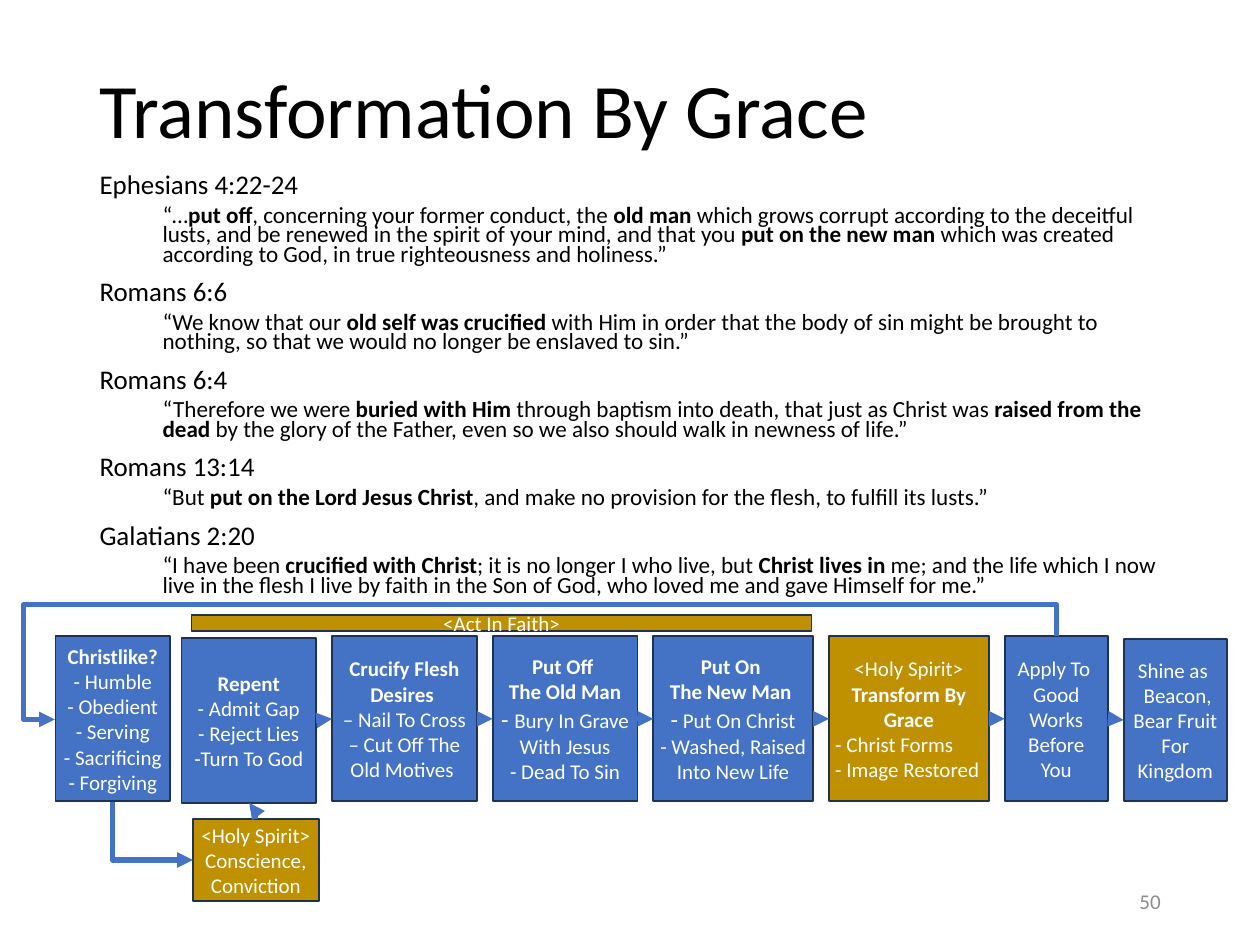
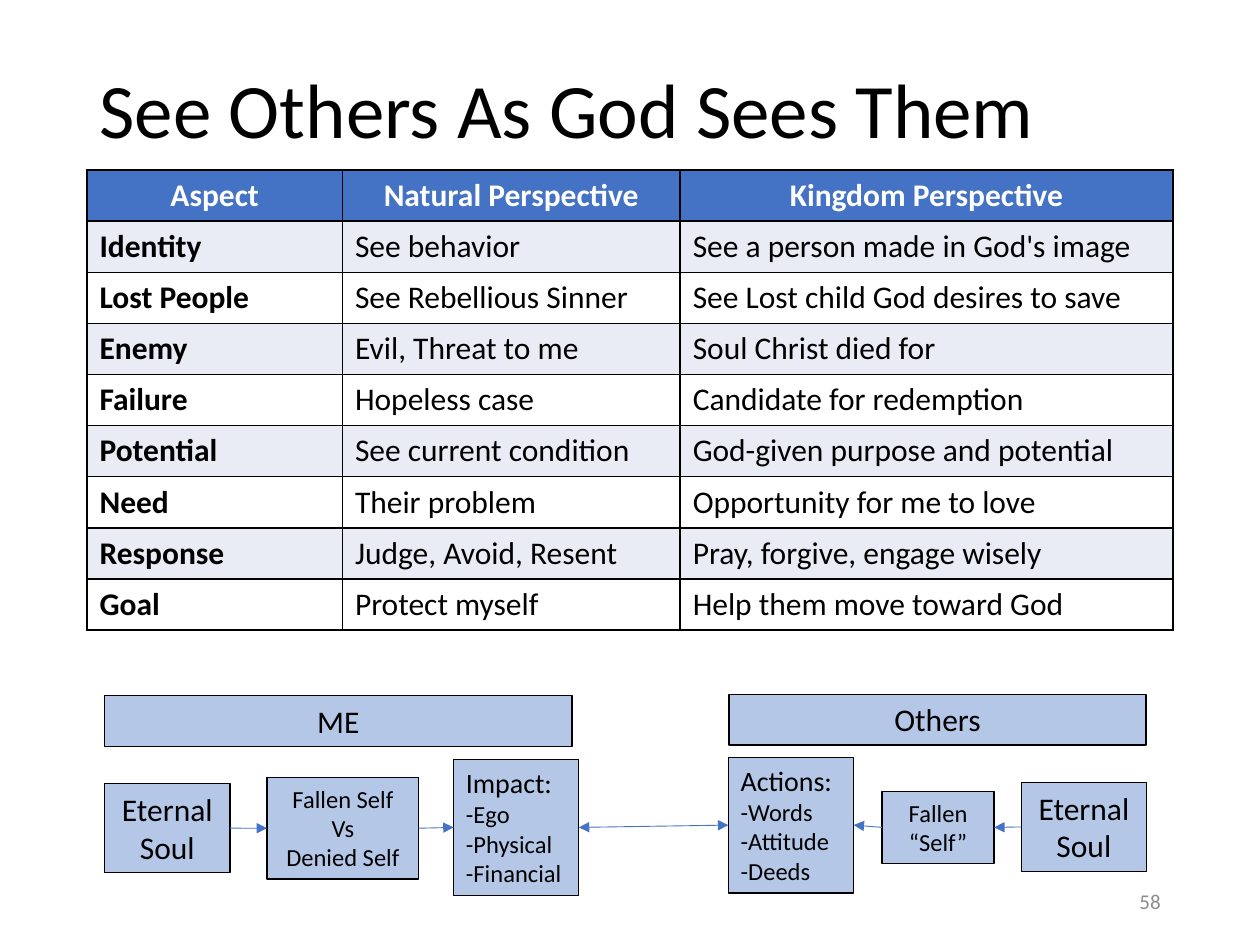
from dataclasses import dataclass
from itertools import pairwise

from lxml.etree import SubElement
from pptx import Presentation
from pptx.dml.color import RGBColor
from pptx.enum.shapes import MSO_CONNECTOR, MSO_SHAPE
from pptx.enum.text import MSO_ANCHOR, MSO_AUTO_SIZE, PP_ALIGN
from pptx.oxml.ns import qn
from pptx.util import Pt


@dataclass(frozen=True)
class Theme:
    font: str = "Calibri"
    black: str = "000000"
    white: str = "FFFFFF"
    blue: str = "4472C4"
    navy: str = "1E3256"
    gold: str = "BF9000"
    pale_blue: str = "B4C7E7"
    band: str = "E9EBF5"
    grey: str = "8C8C8C"
    title: float = 44
    reference: float = 15.4
    verse: float = 13.2
    large: float = 18
    heading: float = 16
    item: float = 14
    step: float = 12


THEME = Theme()
TITLE_ONLY, TITLE_AND_BODY = 5, 1
TOP, LEFT, BOTTOM, RIGHT = range(4)
MARGIN, CONTENT_TOP, CONTENT_WIDTH = 49.7, 97.2, 620.6


class Deck:
    """Holds the theme and the current slide, and draws each kind of element."""

    def __init__(self, theme):
        self.theme = theme
        self.presentation = Presentation()
        self.presentation.slide_width, self.presentation.slide_height = Pt(720), Pt(540)
        self.slide = None

    def new_slide(self, layout, title, number):
        self.slide = self.presentation.slides.add_slide(self.presentation.slide_layouts[layout])
        frame = self.place(self.slide.shapes.title, 28.8, 72, MSO_ANCHOR.MIDDLE)
        paragraph = frame.paragraphs[0]
        paragraph.alignment, paragraph.line_spacing = PP_ALIGN.LEFT, 0.9
        self.runs(paragraph, title, self.theme.title)
        # Slide number
        frame = self.slide.shapes.add_textbox(Pt(508.3), Pt(500.4), Pt(162), Pt(28.8)).text_frame
        frame.word_wrap, frame.vertical_anchor = True, MSO_ANCHOR.MIDDLE
        frame.paragraphs[0].alignment = PP_ALIGN.RIGHT
        self.runs(frame.paragraphs[0], number, self.theme.step, self.theme.grey)

    def place(self, placeholder, top, height, anchor):
        placeholder.left, placeholder.top = Pt(MARGIN), Pt(top)
        placeholder.width, placeholder.height = Pt(CONTENT_WIDTH), Pt(height)
        frame = placeholder.text_frame
        frame.word_wrap, frame.auto_size = True, MSO_AUTO_SIZE.NONE
        frame.vertical_anchor = anchor
        return frame

    def runs(self, paragraph, text, size, color=None):
        """Add text run by run; ** switches bold on and off."""
        for index, part in enumerate(text.split("**")):
            if part:
                run = paragraph.add_run()
                run.text = part
                run.font.name, run.font.size = self.theme.font, Pt(size)
                run.font.bold = index % 2 == 1
                run.font.color.rgb = RGBColor.from_string(color or self.theme.black)

    def paragraphs(self, frame, count):
        return [frame.paragraphs[0]] + [frame.add_paragraph() for _ in range(count - 1)]

    def verses(self, passages):
        frame = self.place(self.slide.placeholders[1], CONTENT_TOP, 283.7, MSO_ANCHOR.TOP)
        lines = [(level, text) for passage in passages for level, text in enumerate(passage)]
        for index, (paragraph, (level, text)) in enumerate(
                zip(self.paragraphs(frame, len(lines)), lines)):
            paragraph.level = level
            properties = paragraph._p.get_or_add_pPr()
            properties.set("marL", str(Pt(36 * level)))
            properties.set("indent", "0")
            SubElement(properties, qn("a:buNone"))
            paragraph.line_spacing = 0.7
            paragraph.space_before = Pt((5 if level else 10) if index else 0)
            self.runs(paragraph, text, self.theme.verse if level else self.theme.reference)

    def box(self, at, fill, line, line_width, lines, color, size, left_from=99):
        """Draw a box; a line is text, or a list of (text, size) runs."""
        shape = self.slide.shapes.add_shape(MSO_SHAPE.RECTANGLE, *map(Pt, at))
        shape.shadow.inherit = False
        shape.fill.solid()
        shape.fill.fore_color.rgb = RGBColor.from_string(fill)
        shape.line.color.rgb = RGBColor.from_string(line)
        shape.line.width = Pt(line_width)
        frame = shape.text_frame
        frame.word_wrap = True
        for index, (paragraph, content) in enumerate(
                zip(self.paragraphs(frame, len(lines)), lines)):
            paragraph.alignment = PP_ALIGN.CENTER if index < left_from else PP_ALIGN.LEFT
            for text, run_size in [(content, size)] if isinstance(content, str) else content:
                self.runs(paragraph, text, run_size, color)
        return shape

    def step(self, at, lines, fill=None, left_from=99):
        shape = self.box(at, fill or self.theme.blue, self.theme.navy, 1, lines,
                         self.theme.white, self.theme.step, left_from)
        frame = shape.text_frame
        frame.vertical_anchor = MSO_ANCHOR.MIDDLE
        frame.margin_left = frame.margin_right = Pt(3.6)
        frame.margin_top = frame.margin_bottom = Pt(3.6)
        return shape

    def label(self, at, lines, size, left_from=99):
        shape = self.box(at, self.theme.pale_blue, self.theme.black, 0.75, lines,
                         self.theme.black, size, left_from)
        shape.text_frame.vertical_anchor = MSO_ANCHOR.TOP
        shape.text_frame.auto_size = MSO_AUTO_SIZE.SHAPE_TO_FIT_TEXT
        return shape

    def finish_connector(self, connector, width, ends):
        connector.line.color.rgb = RGBColor.from_string(self.theme.blue)
        connector.line.width = Pt(width)
        for end in ends:
            SubElement(connector.line._get_or_add_ln(), qn(f"a:{end}End"), type="triangle")
        SubElement(connector._element.spPr, qn("a:effectLst"))

    def arrow(self, start, start_side, finish, finish_side, width, ends=("tail",)):
        connector = self.slide.shapes.add_connector(MSO_CONNECTOR.STRAIGHT, 0, 0, 0, 0)
        connector.begin_connect(start, start_side)
        connector.end_connect(finish, finish_side)
        self.finish_connector(connector, width, ends)

    def elbow(self, at, bends, rotation, end, flips=(), adjustments=()):
        left, top, width, height = at
        connector = self.slide.shapes.add_connector(
            MSO_CONNECTOR.ELBOW, Pt(left), Pt(top), Pt(left + width), Pt(top + height))
        properties = connector._element.spPr
        transform = properties.find(qn("a:xfrm"))
        transform.set("rot", str(rotation * 60000))
        for flip in flips:
            transform.set(flip, "1")
        geometry = properties.find(qn("a:prstGeom"))
        geometry.set("prst", f"bentConnector{bends}")
        for index, value in enumerate(adjustments, 1):
            SubElement(geometry.find(qn("a:avLst")), qn("a:gd"),
                       name=f"adj{index}", fmla=f"val {value}")
        self.finish_connector(connector, 3, [end])

    def table(self, rows, widths, row_height):
        table = self.slide.shapes.add_table(
            len(rows), len(widths), Pt(MARGIN), Pt(CONTENT_TOP),
            Pt(sum(widths)), Pt(row_height * len(rows))).table
        for column, width in zip(table.columns, widths):
            column.width = Pt(width)
        for row_index, row in enumerate(rows):
            table.rows[row_index].height = Pt(row_height)
            header = row_index == 0
            fill = self.theme.blue if header else (self.theme.white, self.theme.band)[row_index % 2]
            for column_index, text in enumerate(row):
                cell = table.cell(row_index, column_index)
                cell.vertical_anchor = MSO_ANCHOR.MIDDLE
                paragraph = cell.text_frame.paragraphs[0]
                paragraph.alignment = PP_ALIGN.CENTER if header else PP_ALIGN.LEFT
                self.runs(paragraph, f"**{text}**" if header or column_index == 0 else text,
                          self.theme.large, self.theme.white if header else self.theme.black)
                self.cell_borders(cell)
                cell.fill.solid()
                cell.fill.fore_color.rgb = RGBColor.from_string(fill)

    def cell_borders(self, cell):
        properties = cell._tc.get_or_add_tcPr()
        for side in "LRTB":
            border = SubElement(properties, qn(f"a:ln{side}"), w=str(Pt(1)))
            SubElement(SubElement(border, qn("a:solidFill")), qn("a:srgbClr"), val=self.theme.black)


def transformation_slide(deck):
    theme = deck.theme
    deck.new_slide(TITLE_AND_BODY, "Transformation By Grace", "50")
    deck.verses([
        ("Ephesians 4:22-24",
         "“…**put off**, concerning your former conduct, the **old man **which grows corrupt "
         "according to the deceitful lusts, and be renewed in the spirit of your mind, and that "
         "you **put on the new man **which was created according to God, in true righteousness "
         "and holiness.”"),
        ("Romans 6:6",
         "“We know that our **old self was crucified **with Him in order that the body of sin "
         "might be brought to nothing, so that we would no longer be enslaved to sin.”"),
        ("Romans 6:4",
         "“Therefore we were **buried with Him** through baptism into death, that just as Christ "
         "was **raised from the dead** by the glory of the Father, even so we also should walk "
         "in newness of life.”"),
        ("Romans 13:14",
         "“But **put on the Lord Jesus Christ**, and make no provision for the flesh, to fulfill "
         "its lusts.”"),
        ("Galatians 2:20",
         "“I have been **crucified with Christ**; it is no longer I who live, but **Christ lives "
         "in **me; and the life which I now live in the flesh I live by faith in the Son of God, "
         "who loved me and gave Himself for me.”"),
    ])

    # Row of steps: top, width, height, lines, fill, first left-aligned line
    top, height, gap = 363.6, 94.3, 9
    steps = [
        (364.5, 77, height, ["**Repent**", "- Admit Gap", "- Reject Lies", "-Turn To God"]),
        (top, 82.8, height, ["**Crucify Flesh Desires **", "– Nail To Cross",
                             "– Cut Off The Old Motives "]),
        (top, 82.8, height, ["**Put Off **", "**The Old Man**",
                             [("- ", theme.item), ("Bury In Grave With Jesus", theme.step)],
                             "- Dead To Sin"]),
        (top, 91.4, height, ["**Put On **", "**The New Man **",
                             [("-", theme.item), (" Put On Christ", theme.step)],
                             "- Washed, Raised Into New Life"]),
        (top, 91.4, height, ["<Holy Spirit>", "**Transform By Grace**", "- Christ Forms",
                             "- Image Restored"], theme.gold, 2),
        (top, 59, height, ["Apply To ", "Good Works Before You"]),
        (365, 59, 92.9, ["Shine as ", " Beacon,", "Bear Fruit For Kingdom"]),
    ]
    left, shapes = 103.7, []
    for step_top, width, step_height, *content in steps:
        shapes.append(deck.step((left, step_top, width, step_height), *content))
        left += width + gap
    for start, finish in pairwise(shapes):
        deck.arrow(start, RIGHT, finish, LEFT, 3)

    # Starting point, conviction and faith bar
    deck.step((31.7, top, 65.5, height),
              ["**Christlike?**", "- Humble", "- Obedient", "- Serving", "- Sacrificing",
               "- Forgiving"])
    deck.step((110.2, 468, 72, 46.8), ["<Holy Spirit>", "Conscience, Conviction"], theme.gold)
    deck.step((109.5, 351.4, 354.3, 9.4), ["<Act In Faith>"], theme.gold)

    # Return loop, then the path through conviction
    deck.elbow((293.8, 101.2, 47.5, 572.4), 4, 270, "tail", ("flipH", "flipV"), (-38100, 103100))
    deck.elbow((64.1, 458, 46.1, 33.4), 2, 180, "head")
    deck.elbow((139.7, 461.5, 9.2, 3.8), 3, 270, "head", ("flipH",), (50000,))


def perspective_slide(deck):
    theme = deck.theme
    deck.new_slide(TITLE_ONLY, "See Others As God Sees Them", "58")
    deck.table([
        ("Aspect", "Natural Perspective", "Kingdom Perspective"),
        ("Identity", "See behavior", "See a person made in God's image"),
        ("Lost People", "See Rebellious Sinner", "See Lost child God desires to save"),
        ("Enemy", "Evil, Threat to me", "Soul Christ died for"),
        ("Failure", "Hopeless case", "Candidate for redemption"),
        ("Potential", "See current condition", "God-given purpose and potential"),
        ("Need", "Their problem", "Opportunity for me to love"),
        ("Response", "Judge, Avoid, Resent", "Pray, forgive, engage wisely"),
        ("Goal", "Protect myself", "Help them move toward God"),
    ], (146, 193, 281.6), 29.2)

    # Me
    deck.label((59.8, 397.4, 267.1, 29.1), ["ME"], theme.large)
    my_soul = deck.label((59.8, 447.8, 71.6, 50.9), ["Eternal Soul"], theme.large)
    my_self = deck.label((152.6, 444.2, 86.8, 58.2), ["Fallen Self", "Vs", "Denied Self"],
                         theme.item)
    impact = deck.label((259.2, 434, 71.6, 77.6),
                        [[("Impact:", theme.heading)], "-Ego", "-Physical", "-Financial"],
                        theme.item, 0)

    # Others
    deck.label((416.6, 396.7, 238.3, 29.1), ["Others"], theme.large)
    actions = deck.label((416.2, 432.7, 71.6, 77.6),
                         [[("Actions:", theme.heading)], "-Words", "-Attitude", "-Deeds"],
                         theme.item, 0)
    their_self = deck.label((504, 452.2, 64.1, 41.2), ["Fallen", "“Self”"], theme.item)
    their_soul = deck.label((583.6, 447.1, 71.6, 50.9), ["Eternal Soul"], theme.large)

    # Arrows lead from each soul towards the meeting of impact and actions
    for start, finish in pairwise((my_soul, my_self, impact)):
        deck.arrow(start, RIGHT, finish, LEFT, 0.5)
    for start, finish in pairwise((their_soul, their_self, actions)):
        deck.arrow(start, LEFT, finish, RIGHT, 0.5)
    deck.arrow(actions, LEFT, impact, RIGHT, 0.5, ("head", "tail"))


def main():
    deck = Deck(THEME)
    transformation_slide(deck)
    perspective_slide(deck)
    deck.presentation.save("out.pptx")


if __name__ == "__main__":
    main()
